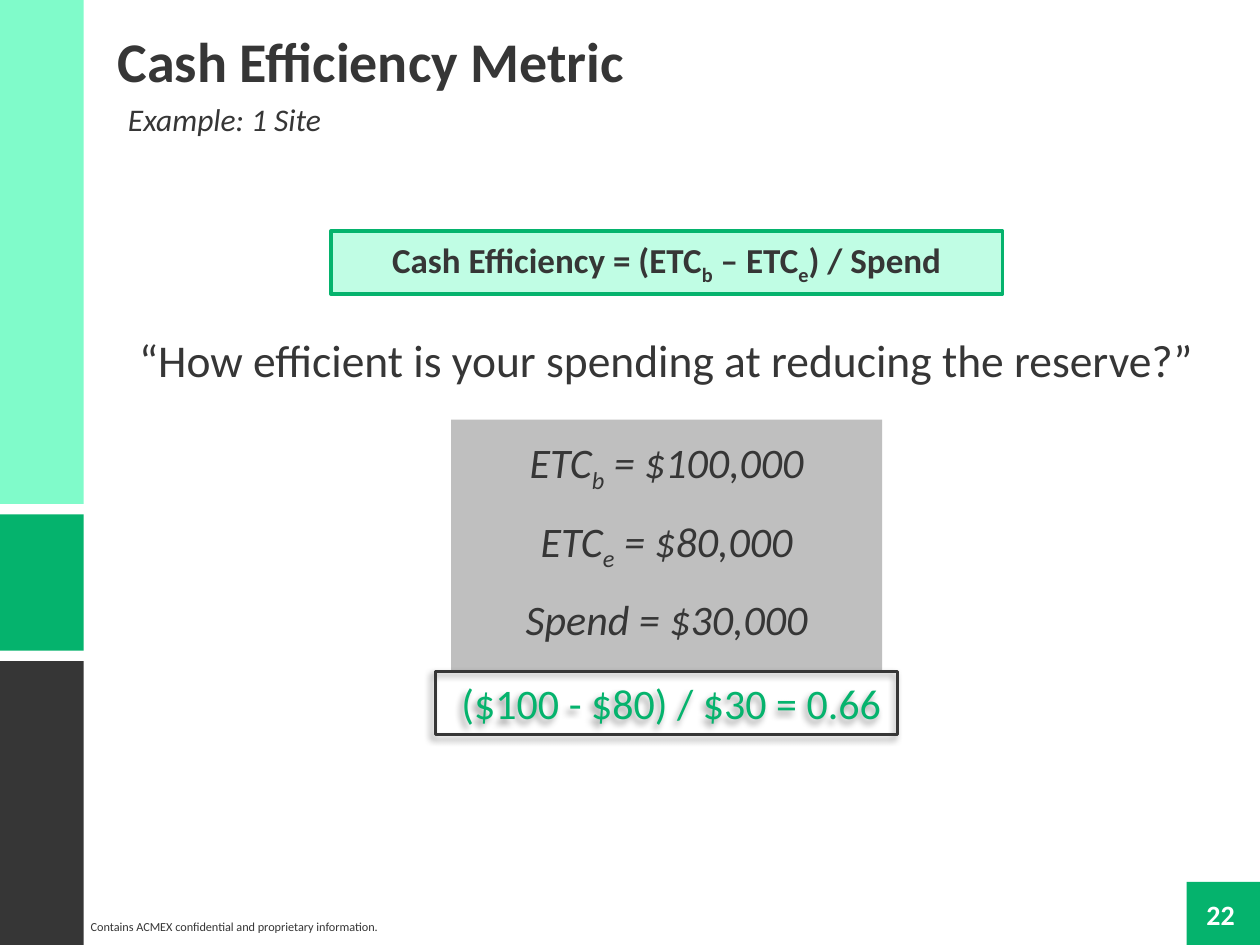
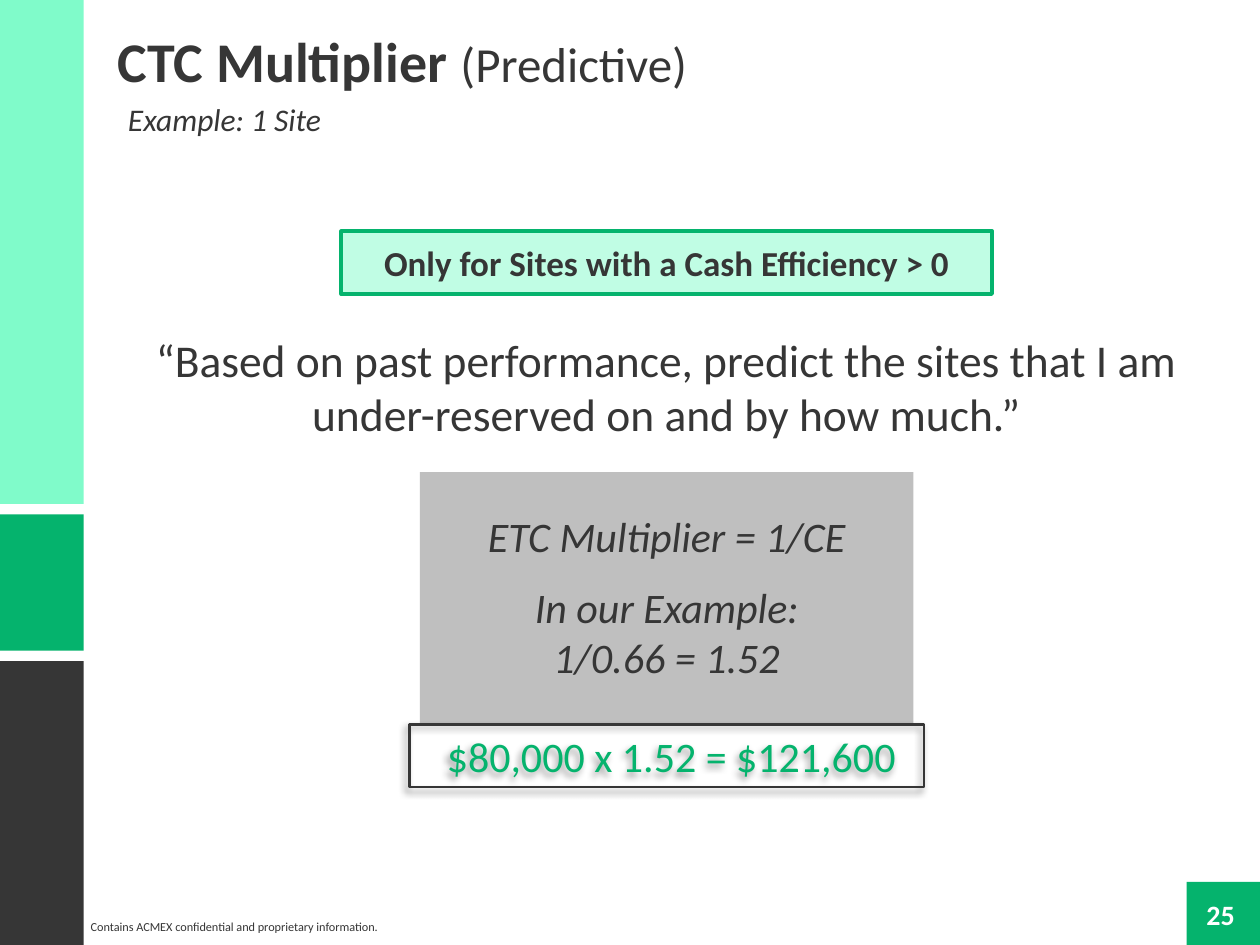
from dataclasses import dataclass

from lxml.etree import SubElement
from pptx import Presentation
from pptx.dml.color import RGBColor
from pptx.enum.shapes import MSO_SHAPE
from pptx.enum.text import MSO_ANCHOR, PP_ALIGN
from pptx.oxml.ns import qn
from pptx.util import Cm, Pt

COLORS = {
    "ink": "363636",
    "green": "05B36D",
    "mint": "80FBCA",
    "pale_mint": "C0FDE4",
    "gray": "BFBFBF",
    "white": "FFFFFF",
    "black": "000000",
}
FONT = "Calibri"
SLIDE_WIDTH, SLIDE_HEIGHT = 25.4, 19.05
CONTENT_CENTER = 13.44
PANEL_HEIGHT = 5.08
BOX_HEIGHT = 1.27
BAND_WIDTH, BAND_GAP = 1.69, 0.21
BANDS = (("mint", 10.16), ("green", 2.75), ("ink", 5.72))
BADGE_LEFT, BADGE_TOP = 23.92, 17.78


@dataclass(frozen=True)
class Span:
    text: str
    subscript: bool = False
    size: float | None = None
    bold: bool | None = None


@dataclass(frozen=True)
class Box:
    left: float
    top: float
    width: float
    height: float


@dataclass(frozen=True)
class ExampleSlide:
    number: int
    title: list[Span]
    formula: list[Span]
    formula_width: float
    question: str
    question_height: float
    panel_top: float
    panel_width: float
    details: list[list[Span]]
    details_box: Box
    result: str
    result_width: float


def centered(top: float, width: float, height: float) -> Box:
    """Place a box on the axis shared by all content."""
    return Box(CONTENT_CENTER - width / 2, top, width, height)


def lengths(box: Box) -> list[Cm]:
    return [Cm(value) for value in (box.left, box.top, box.width, box.height)]


def add_rectangle(slide, box: Box, fill: str | None = None,
                  line: str | None = None, line_width: float = 1):
    shape = slide.shapes.add_shape(MSO_SHAPE.RECTANGLE, *lengths(box))
    shape.shadow.inherit = False
    if fill:
        shape.fill.solid()
        shape.fill.fore_color.rgb = RGBColor.from_string(COLORS[fill])
    else:
        shape.fill.background()
    if line:
        shape.line.color.rgb = RGBColor.from_string(COLORS[line])
        shape.line.width = Pt(line_width)
    else:
        shape.line.fill.background()
    return shape


def add_shadow(shape) -> None:
    """Cast a soft shadow to the lower left."""
    effects = shape._element.spPr.find(qn("a:effectLst"))
    shadow = SubElement(effects, qn("a:outerShdw"), blurRad=str(Pt(4)),
                        dist=str(Pt(3)), dir="8100000", algn="tr", rotWithShape="0")
    color = SubElement(shadow, qn("a:srgbClr"), val=COLORS["black"])
    SubElement(color, qn("a:alpha"), val="40000")


def write(shape, paragraphs: list[list[Span]], *, size: float, color: str = "ink",
          bold: bool = False, italic: bool = False, align=PP_ALIGN.LEFT,
          anchor=MSO_ANCHOR.TOP, space_after: float = 0, wrap: bool = True,
          side_insets: tuple[float, float] = (0.25, 0.25)) -> None:
    frame = shape.text_frame
    frame.word_wrap = wrap
    frame.vertical_anchor = anchor
    frame.margin_left, frame.margin_right = map(Cm, side_insets)
    for index, spans in enumerate(paragraphs):
        paragraph = frame.add_paragraph() if index else frame.paragraphs[0]
        paragraph.alignment = align
        paragraph.space_after = Pt(space_after)
        for span in spans:
            run = paragraph.add_run()
            run.text = span.text
            run.font.name = FONT
            run.font.size = Pt(span.size or size)
            run.font.bold = bold if span.bold is None else span.bold
            run.font.italic = italic
            run.font.color.rgb = RGBColor.from_string(COLORS[color])
            if span.subscript:
                run._r.get_or_add_rPr().set("baseline", "-25000")


def add_text(slide, box: Box, paragraphs: list[list[Span]], **text_format):
    shape = slide.shapes.add_textbox(*lengths(box))
    write(shape, paragraphs, **text_format)
    return shape


def add_frame(slide, number: int) -> None:
    # Page badge and footer
    add_rectangle(slide, Box(BADGE_LEFT, BADGE_TOP, SLIDE_WIDTH - BADGE_LEFT,
                             SLIDE_HEIGHT - BADGE_TOP), "green")
    add_text(slide, Box(1.83, 18.41, 6.22, 0.56),
             [[Span("Contains ACMEX confidential and proprietary information.")]],
             size=7, side_insets=(0, 0))
    add_text(slide, Box(BADGE_LEFT, 17.96, 1.37, 0.94), [[Span(str(number))]],
             size=16, color="white", bold=True, align=PP_ALIGN.CENTER,
             side_insets=(0, 0))

    # Side bands
    top = 0.0
    for color, height in BANDS:
        add_rectangle(slide, Box(0, top, BAND_WIDTH, height), color)
        top += height + BAND_GAP


def add_example(presentation, example: ExampleSlide) -> None:
    slide = presentation.slides.add_slide(presentation.slide_layouts[6])
    add_frame(slide, example.number)

    # Title and subtitle
    add_text(slide, Box(2.12, 0.42, 22.86, 1.63), [example.title], size=32, bold=True)
    add_text(slide, Box(2.33, 1.9, 4.47, 1.01), [[Span("Example: 1 Site")]],
             size=18, italic=True, wrap=False)

    # Formula and question
    formula = add_rectangle(slide, centered(4.66, example.formula_width, BOX_HEIGHT),
                            "pale_mint", "green", 2)
    write(formula, [example.formula], size=20, bold=True,
          align=PP_ALIGN.CENTER, anchor=MSO_ANCHOR.MIDDLE)
    add_text(slide, centered(6.56, 21.8, example.question_height),
             [[Span(example.question)]], size=26, align=PP_ALIGN.CENTER, space_after=6)

    # Worked example and its result
    add_rectangle(slide, centered(example.panel_top, example.panel_width, PANEL_HEIGHT),
                  "gray")
    add_text(slide, example.details_box, example.details, size=24, italic=True,
             align=PP_ALIGN.CENTER, space_after=12)
    result = add_rectangle(
        slide, centered(example.panel_top + PANEL_HEIGHT, example.result_width, BOX_HEIGHT),
        line="ink", line_width=1.5)
    add_shadow(result)
    write(result, [[Span(example.result)]], size=24, color="green",
          align=PP_ALIGN.CENTER, side_insets=(0.44, 0.25))


EXAMPLES = [
    ExampleSlide(
        number=22,
        title=[Span("Cash Efficiency Metric")],
        formula=[Span("Cash Efficiency = (ETC"), Span("b", subscript=True),
                 Span(" – ETC"), Span("e", subscript=True), Span(") / Spend")],
        formula_width=13.54,
        question="“How efficient is your spending at reducing the reserve?”",
        question_height=1.37,
        panel_top=8.46,
        panel_width=8.69,
        details=[
            [Span("ETC"), Span("b", subscript=True), Span(" = $100,000")],
            [Span("ETC"), Span("e", subscript=True), Span(" = $80,000")],
            [Span("Spend = $30,000")],
        ],
        details_box=centered(8.68, 8.25, 4.19),
        result="($100 - $80) / $30 = 0.66",
        result_width=9.31,
    ),
    ExampleSlide(
        number=25,
        title=[Span("CTC Multiplier "), Span("(Predictive)", size=28, bold=False)],
        formula=[Span("Only for Sites with a Cash Efficiency > 0")],
        formula_width=13.12,
        question="“Based on past performance, predict the sites that I am "
                 "under-reserved on and by how much.”",
        question_height=2.49,
        panel_top=9.52,
        panel_width=9.95,
        details=[[Span("ETC Multiplier = 1/CE")],
                 [Span("In our Example: 1/0.66 = 1.52")]],
        details_box=centered(10.16, 8, 3.76),
        result="$80,000 x 1.52 = $121,600",
        result_width=10.37,
    ),
]


def main() -> None:
    presentation = Presentation()
    presentation.slide_width = Cm(SLIDE_WIDTH)
    presentation.slide_height = Cm(SLIDE_HEIGHT)
    for example in EXAMPLES:
        add_example(presentation, example)
    presentation.save("out.pptx")


if __name__ == "__main__":
    main()
